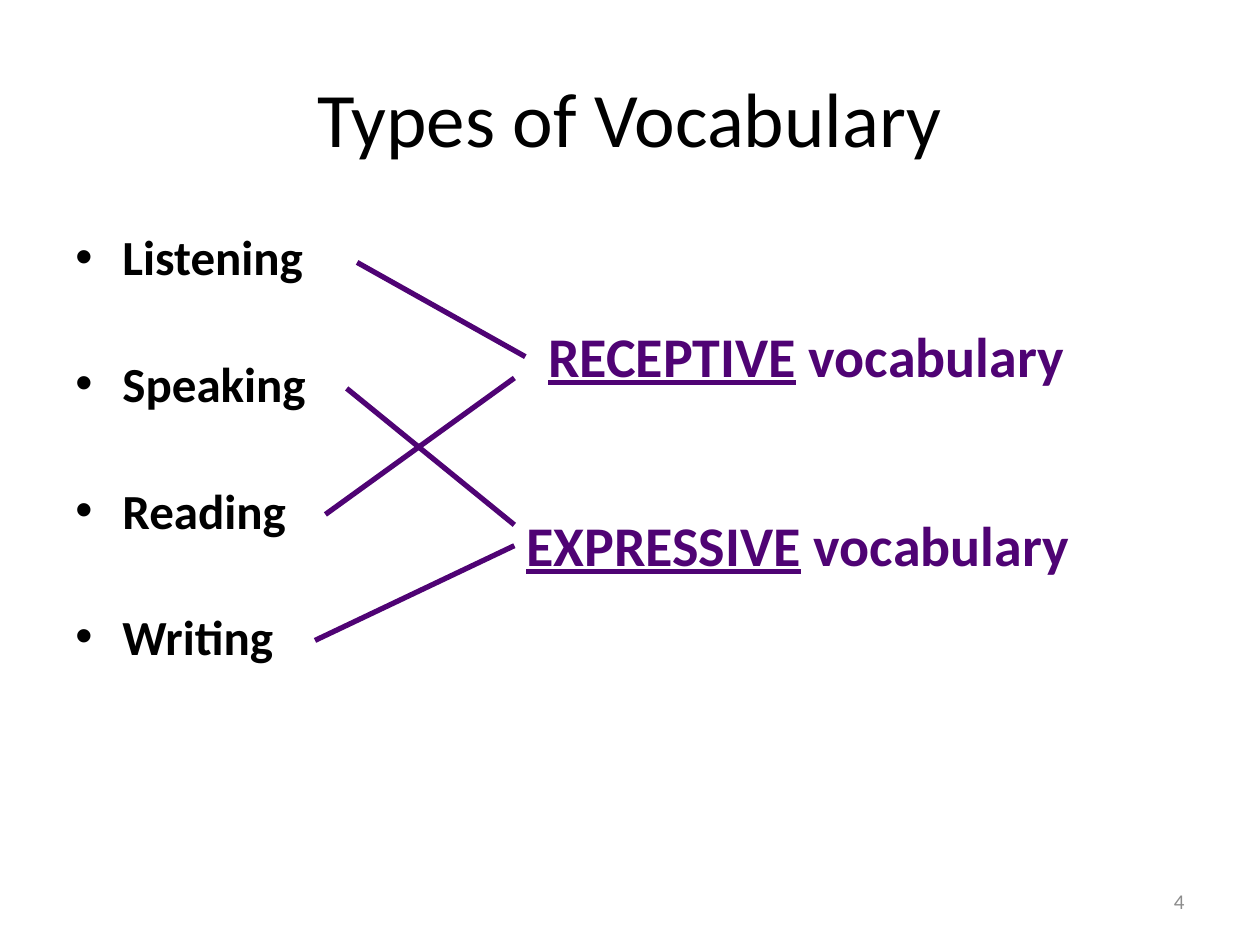
from dataclasses import dataclass

from lxml.etree import SubElement
from pptx import Presentation
from pptx.dml.color import RGBColor
from pptx.enum.shapes import MSO_CONNECTOR
from pptx.enum.text import MSO_ANCHOR, PP_ALIGN
from pptx.oxml.ns import qn
from pptx.util import Cm, Pt


@dataclass(frozen=True)
class Theme:
    font: str = "Calibri"
    ink: RGBColor = RGBColor(0x00, 0x00, 0x00)
    accent: RGBColor = RGBColor(0x4F, 0x03, 0x74)
    muted: RGBColor = RGBColor(0x8C, 0x8C, 0x8C)
    title: int = 44
    group: int = 32
    item: int = 28
    number: int = 12
    line: int = 3


THEME = Theme()


def add_box(s, box, anchor=MSO_ANCHOR.TOP):
    tf = s.shapes.add_textbox(*(Cm(v) for v in box)).text_frame
    tf.word_wrap = True
    tf.vertical_anchor = anchor
    return tf


def add_run(p, text, size, color, bold=False, underline=False):
    r = p.add_run()
    r.text = text
    f = r.font
    f.name, f.size, f.bold, f.underline = THEME.font, Pt(size), bold, underline
    f.color.rgb = color


def set_bullet(p, indent):
    pPr = p._p.get_or_add_pPr()
    pPr.set("marL", str(indent))
    pPr.set("indent", str(-indent))
    SubElement(pPr, qn("a:buFont")).set("typeface", "Arial")
    SubElement(pPr, qn("a:buChar")).set("char", "•")


def add_title(s, box, text):
    p = add_box(s, box, MSO_ANCHOR.MIDDLE).paragraphs[0]
    p.alignment = PP_ALIGN.CENTER
    add_run(p, text, THEME.title, THEME.ink)


def add_skills(s, box, skills):
    tf = add_box(s, box)
    for i, skill in enumerate(skills):
        p = tf.add_paragraph() if i else tf.paragraphs[0]
        p.space_before = Pt(0)
        p.space_after = Pt(38.7)
        set_bullet(p, Cm(0.95))
        add_run(p, skill, THEME.item, THEME.ink, bold=True)


def add_group(s, box, name):
    p = add_box(s, box).paragraphs[0]
    add_run(p, name, THEME.group, THEME.accent, bold=True, underline=True)
    add_run(p, " vocabulary", THEME.group, THEME.accent, bold=True)


def add_links(s, box, links):
    left, top = box[:2]
    for x1, y1, x2, y2 in links:
        ln = s.shapes.add_connector(
            MSO_CONNECTOR.STRAIGHT,
            Cm(left + x1), Cm(top + y1), Cm(left + x2), Cm(top + y2))
        ln.line.color.rgb = THEME.accent
        ln.line.width = Pt(THEME.line)
        SubElement(ln._element.spPr, qn("a:effectLst"))


def add_number(s, box, number):
    p = add_box(s, box, MSO_ANCHOR.MIDDLE).paragraphs[0]
    p.alignment = PP_ALIGN.RIGHT
    add_run(p, number, THEME.number, THEME.muted)


def main():
    prs = Presentation()
    prs.slide_width, prs.slide_height = Cm(25.4), Cm(19.05)
    s = prs.slides.add_slide(prs.slide_layouts[6])

    # Title and the four skills
    add_title(s, (1.27, 0.76, 22.86, 3.18), "Types of Vocabulary")
    add_skills(s, (1.27, 4.45, 7.16, 12.57),
               ("Listening", "Speaking", "Reading", "Writing"))

    # Vocabulary groups
    add_group(s, (10.8, 6.35, 13.54, 1.6), "RECEPTIVE")
    add_group(s, (10.36, 10.16, 14.4, 1.6), "EXPRESSIVE")

    # Links from each skill to its group
    add_links(s, (6.35, 5.29, 4.24, 7.62), (
        (0.64, 2.54, 4.02, 5.29),  # Speaking to expressive
        (0, 7.62, 4.02, 5.71),     # Writing to expressive
        (0.21, 5.08, 4.02, 2.33),  # Reading to receptive
        (0.85, 0, 4.24, 1.9),      # Listening to receptive
    ))

    # Slide number
    add_number(s, (18.2, 17.66, 5.93, 1.01), "4")
    prs.save("out.pptx")


if __name__ == "__main__":
    main()
